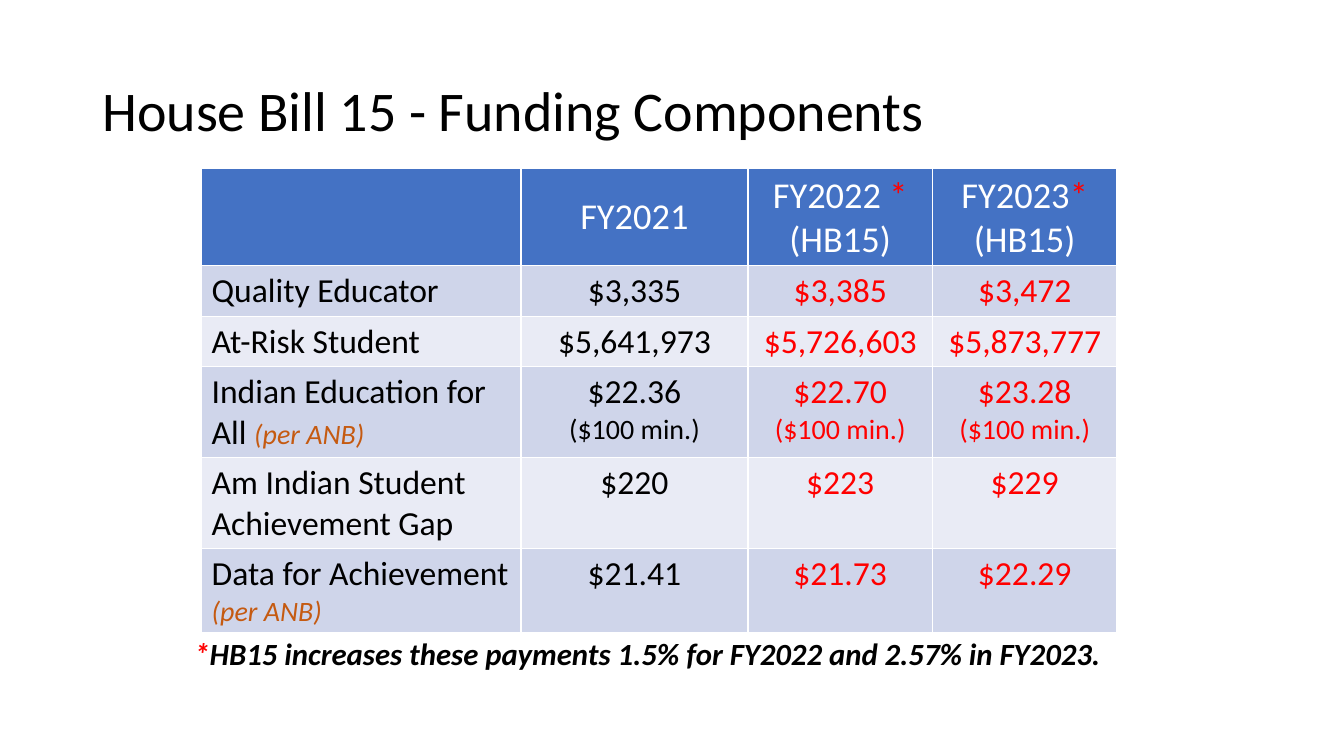
from pptx import Presentation
from pptx.dml.color import RGBColor as Rgb
from pptx.enum.text import MSO_ANCHOR as Anchor, PP_ALIGN as Align
from pptx.util import Cm, Pt

# Content: a cell is a list of paragraphs, a paragraph a list of (text, style)
TITLE = "House Bill 15 - Funding Components"
NOTE = [("*", "star"),
        ("HB15 increases these payments 1.5% for FY2022 and 2.57% in FY2023.", "note")]
UNIT = ("(per ANB)", "unit")
MIN = "($100 min.)"
HEAD = [
    [],
    [[("FY2021", "head")]],
    [[("FY2022 ", "head"), ("*", "mark"), (" (HB15)", "head")]],
    [[("FY2023", "head"), ("*", "mark"), (" (HB15)", "head")]],
]
ROWS = [
    ([("Quality Educator", "body")], "$3,335", "$3,385", "$3,472"),
    ([("At-Risk Student", "body")], "$5,641,973", "$5,726,603", "$5,873,777"),
    ([("Indian Education for All ", "body"), UNIT],
     [[("$22.36", "body")], [(MIN, "small")]],
     [[("$22.70 ", "new"), (MIN, "least")]],
     [[("$23.28 ", "new"), (MIN, "least")]]),
    ([("Am Indian Student Achievement Gap", "body")], "$220", "$223", "$229"),
    ([("Data for Achievement ", "body"), UNIT], "$21.41", "$21.73", "$22.29"),
]

# Theme: style is (size, colour, bold, italic)
THEME = {
    "font": "Calibri",
    "fill": {"head": "4472C4", "odd": "CFD5EA", "even": "E9EBF5"},
    "text": {
        "title": (40, "000000", False, False),
        "star": (22, "FF0000", True, True),
        "note": (22, "000000", True, True),
        "head": (26, "FFFFFF", False, False),
        "mark": (26, "FF0000", False, False),
        "body": (24, "000000", False, False),
        "new": (24, "FF0000", False, False),
        "small": (20, "000000", False, False),
        "least": (20, "FF0000", False, False),
        "unit": (20, "C55A11", False, True),
    },
}

# Layout in centimetres
SIZE = (33.87, 19.05)
TITLE_BOX = (2.33, 1.01, 29.21, 3.68)
NOTE_BOX = (4.65, 15.88, 24.56, 1.2)
LEFT, TOP = 5.08, 4.24
COLS = [8.05, 5.72, 4.65, 4.65]
TALLS = [2.44, 1.27, 1.27, 2.29, 2.29, 2.11]


def style(font, name):
    size, tone, bold, slant = THEME["text"][name]
    font.name, font.size = THEME["font"], Pt(size)
    font.color.rgb = Rgb.from_string(tone)
    font.bold, font.italic = bold, slant


def write(para, runs, align=Align.LEFT):
    para.alignment = align
    if len({name for _, name in runs}) == 1:
        style(para.font, runs[0][1])
    for text, name in runs:
        run = para.add_run()
        run.text = text
        style(run.font, name)


def add_text(slide, box, runs, anchor=Anchor.TOP):
    frame = slide.shapes.add_textbox(*map(Cm, box)).text_frame
    frame.word_wrap = True
    frame.vertical_anchor = anchor
    write(frame.paragraphs[0], runs)
    return frame


def set_cell(cell, paras, fill, align, anchor):
    cell.fill.solid()
    cell.fill.fore_color.rgb = Rgb.from_string(THEME["fill"][fill])
    cell.vertical_anchor = anchor
    frame = cell.text_frame
    for i, runs in enumerate(paras):
        write(frame.add_paragraph() if i else frame.paragraphs[0], runs, align)


def expand(row):
    """Turn a row of labels and plain values into cells of paragraphs."""
    label, *values = row
    names = ("body", "new", "new")
    return [[label]] + [[[(v, n)]] if isinstance(v, str) else v
                        for v, n in zip(values, names)]


def add_grid(slide):
    rows = [HEAD] + [expand(row) for row in ROWS]
    grid = slide.shapes.add_table(
        len(rows), len(COLS), Cm(LEFT), Cm(TOP), Cm(sum(COLS)), Cm(sum(TALLS))).table
    for col, wide in zip(grid.columns, COLS):
        col.width = Cm(wide)
    for r, (row, tall) in enumerate(zip(rows, TALLS)):
        grid.rows[r].height = Cm(tall)
        fill = "head" if r == 0 else "odd" if r % 2 else "even"
        anchor = Anchor.TOP if r else Anchor.MIDDLE
        for c, paras in enumerate(row):
            align = Align.CENTER if c else Align.LEFT
            set_cell(grid.cell(r, c), paras, fill, align, anchor)


def main():
    deck = Presentation()
    deck.slide_width, deck.slide_height = map(Cm, SIZE)
    slide = deck.slides.add_slide(deck.slide_layouts[6])
    # Title
    frame = add_text(slide, TITLE_BOX, [(TITLE, "title")], Anchor.MIDDLE)
    frame.paragraphs[0].line_spacing = 0.9
    # Footnote and table
    add_text(slide, NOTE_BOX, NOTE)
    add_grid(slide)
    deck.save("out.pptx")


if __name__ == "__main__":
    main()
